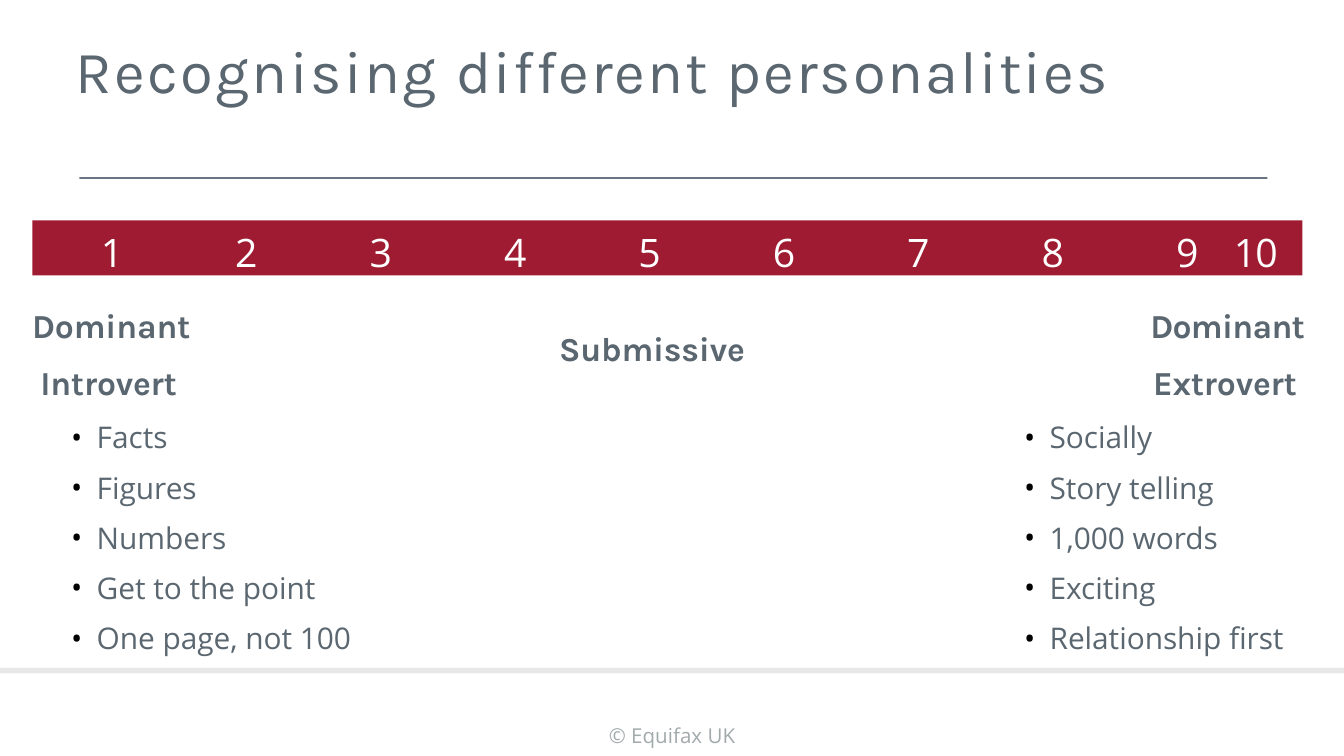
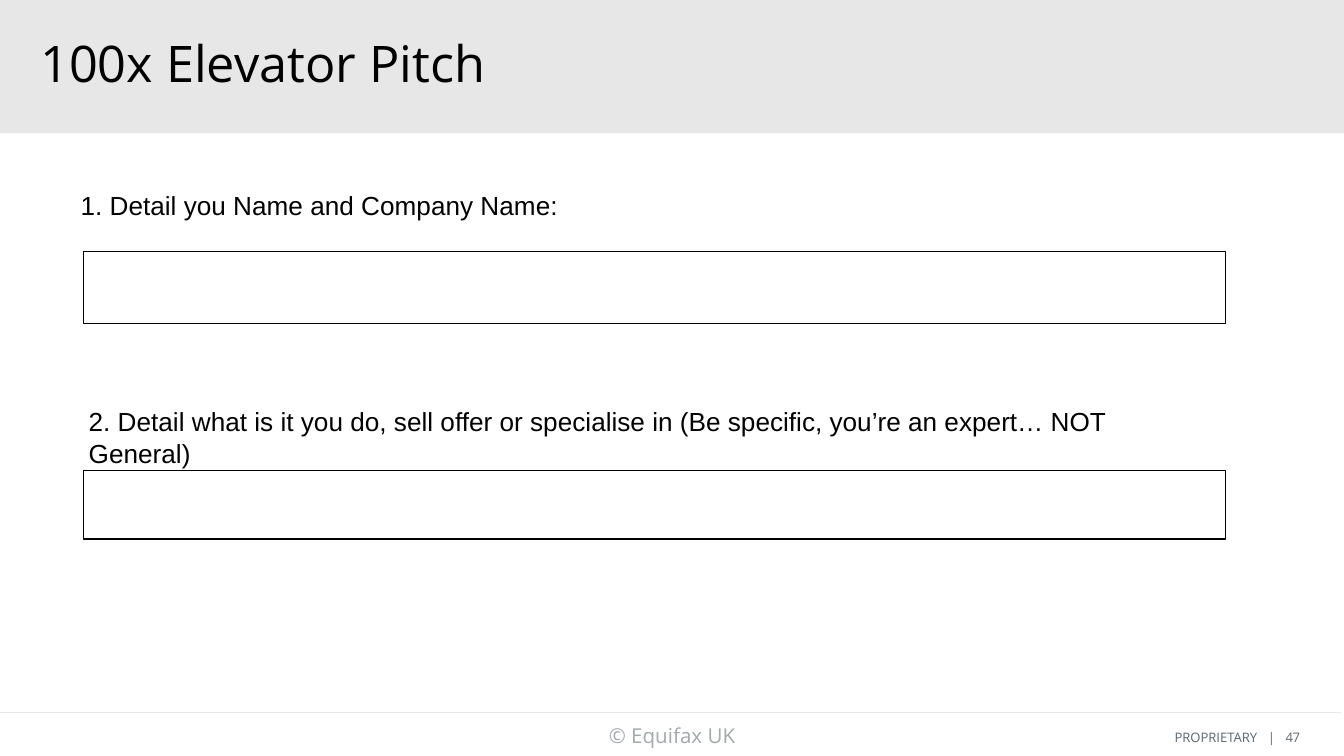
from dataclasses import dataclass
from pptx import Presentation
from pptx.dml.color import RGBColor as RGB
from pptx.enum.shapes import MSO_CONNECTOR as CONN, MSO_SHAPE as SHAPE
from pptx.oxml.ns import qn
from pptx.util import Pt
from lxml.etree import SubElement as Sub


@dataclass(frozen=True)
class Theme:
    slate: RGB = RGB.from_string("5B6770")
    red: RGB = RGB.from_string("9E1B31")
    navy: RGB = RGB.from_string("1D2B42")
    band: RGB = RGB.from_string("E7E7E7")
    pale: RGB = RGB.from_string("A2AAAC")
    number: RGB = RGB.from_string("5F6A71")
    black: RGB = RGB.from_string("000000")
    white: RGB = RGB.from_string("FFFFFF")
    title: int = 32
    title2: int = 27
    scale: int = 21
    heading: int = 18
    item: int = 16
    question: int = 14
    footer: int = 11
    tiny: int = 7


T = Theme()
PX = 9144
STYLES = {
    "title": dict(name="Karla", size=T.title, color=T.slate, spc=130),
    "title_end": dict(name="Karla", size=T.title, color=T.slate, spc=110),
    "title2": dict(name="Open Sans", size=T.title2, color=T.black),
    "scale": dict(name="Open Sans", size=T.scale, color=T.white, spc=-50),
    "heading": dict(name="Karla", size=T.heading, color=T.slate, bold=True, spc=-10),
    "tight": dict(name="Karla", size=T.heading, color=T.slate, bold=True, spc=-40),
    "item": dict(name="Open Sans", size=T.item, color=T.slate),
    "question": dict(name="Arial", size=T.question, color=T.black),
    "footer": dict(name="Open Sans", size=T.footer, color=T.pale),
    "tiny": dict(name="Open Sans", size=T.tiny, color=T.slate),
    "gap": dict(name="Open Sans", size=T.tiny, color=T.slate, spc=390),
    "number": dict(name="Open Sans", size=T.tiny, color=T.number, spc=-20),
}


def add_rect(s, box, fill=None, line=None):
    sp = s.shapes.add_shape(SHAPE.RECTANGLE, *[v * PX for v in box])
    sp.shadow.inherit = False
    if fill is None:
        sp.fill.background()
    else:
        sp.fill.solid()
        sp.fill.fore_color.rgb = fill
    if line is None:
        sp.line.fill.background()
    else:
        sp.line.color.rgb = line
        sp.line.width = Pt(0.72)
    return sp


def write(sp, paras, top=1):
    tf = sp.text_frame
    frame = dict(word_wrap=True, margin_left=0, margin_right=0,
                 margin_top=top * PX, margin_bottom=0, vertical_anchor=1)
    for key, value in frame.items():
        setattr(tf, key, value)
    for i, (runs, indent, before) in enumerate(paras):
        p = tf.add_paragraph() if i else tf.paragraphs[0]
        p.alignment = 1
        pPr = p._p.get_or_add_pPr()
        pPr.set("marL", str(indent * PX))
        pPr.set("defTabSz", str(100 * PX))
        if runs[0][1] == "item":
            pPr.set("indent", str(-19 * PX))
            Sub(Sub(pPr, qn("a:buClr")), qn("a:srgbClr")).set("val", str(T.black))
            Sub(pPr, qn("a:buFont")).set("typeface", "Open Sans")
            Sub(pPr, qn("a:buChar")).set("char", "•")
        if i:
            p.space_before = Pt(before)
        for text, style in runs:
            r = p.add_run()
            r.text = text
            for key, value in STYLES[style].items():
                if key == "color":
                    r.font.color.rgb = value
                elif key == "spc":
                    r._r.get_or_add_rPr().set("spc", str(value))
                else:
                    setattr(r.font, key, Pt(value) if key == "size" else value)


prs = Presentation()
prs.slide_width = 1000 * PX
prs.slide_height = prs.slide_width * 9 // 16
blank = prs.slide_layouts[6]
personalities, pitch = [prs.slides.add_slide(blank) for _ in range(2)]

s = personalities
add_rect(s, (0, 497, 1000, 4), T.band)
add_rect(s, (59, 132, 884, 1), T.navy)
bar = add_rect(s, (24, 164, 945, 41), T.red)
numbers = "\t".join(str(n) for n in range(1, 11))
write(bar, [([(numbers, "scale")], 51, 0)], 6)

columns = [
    ((23, 214, 240, 275), ("Dominant", "heading", 1), ("Introvert", "heading", 7), 49,
     ["Facts", "Figures", "Numbers", "Get to the point", "One page, not 100"]),
    ((761, 214, 216, 275), ("Dominant", "tight", 95), ("Extrovert", "heading", 97), 20,
     ["Socially", "Story telling", "1,000 words", "Exciting", "Relationship first"]),
]
for box, first, second, indent, items in columns:
    paras = [([(text, style)], left, 8.7) for text, style, left in (first, second)]
    paras += [([(text, "item")], indent, 7.7 if i else 9.1) for i, text in enumerate(items)]
    write(s.shapes.add_textbox(*[v * PX for v in box]), paras, 13)

s = pitch
add_rect(s, (0, 0, 1000, 99), T.band)
ln = s.shapes.add_connector(CONN.STRAIGHT, 0, 530 * PX, 998 * PX, 530 * PX)
ln.line.color.rgb = T.band
ln.line.width = Pt(0.72)
Sub(ln._element.spPr, qn("a:effectLst"))
for top, height in ((187, 54), (350, 51)):
    add_rect(s, (62, top, 850, height), line=T.black)

title_box = (29, 23, 852, 76)
labels = [
    (personalities, (415, 243, 145, 33), [("Submissive", "heading")], 1, 1),
    (personalities, title_box,
     [("Recognising ", "title"), ("different personalities", "title_end")], 27, 2),
    (pitch, title_box, [("100x Elevator Pitch", "title2")], 1, 1),
    (pitch, (59, 140, 366, 26), [("1. Detail you Name and Company Name:", "question")], 1, 1),
    (pitch, (65, 301, 838, 26),
     [("2. Detail what is it you do, sell offer or specialise in "
       "(Be specific, you’re an expert… NOT General)", "question")], 1, 1),
    (pitch, (873, 541, 102, 16),
     [("PROPRIETARY", "tiny"), (" ", "gap"), ("|", "tiny"), (" ", "gap"), ("47", "number")], 1, 2),
]
labels += [(s, (452, 535, 97, 24), [("© Equifax UK", "footer")], 1, 3)
           for s in (personalities, pitch)]
for s, box, runs, indent, top in labels:
    write(s.shapes.add_textbox(*[v * PX for v in box]), [(runs, indent, 0)], top)

prs.save("out.pptx")
